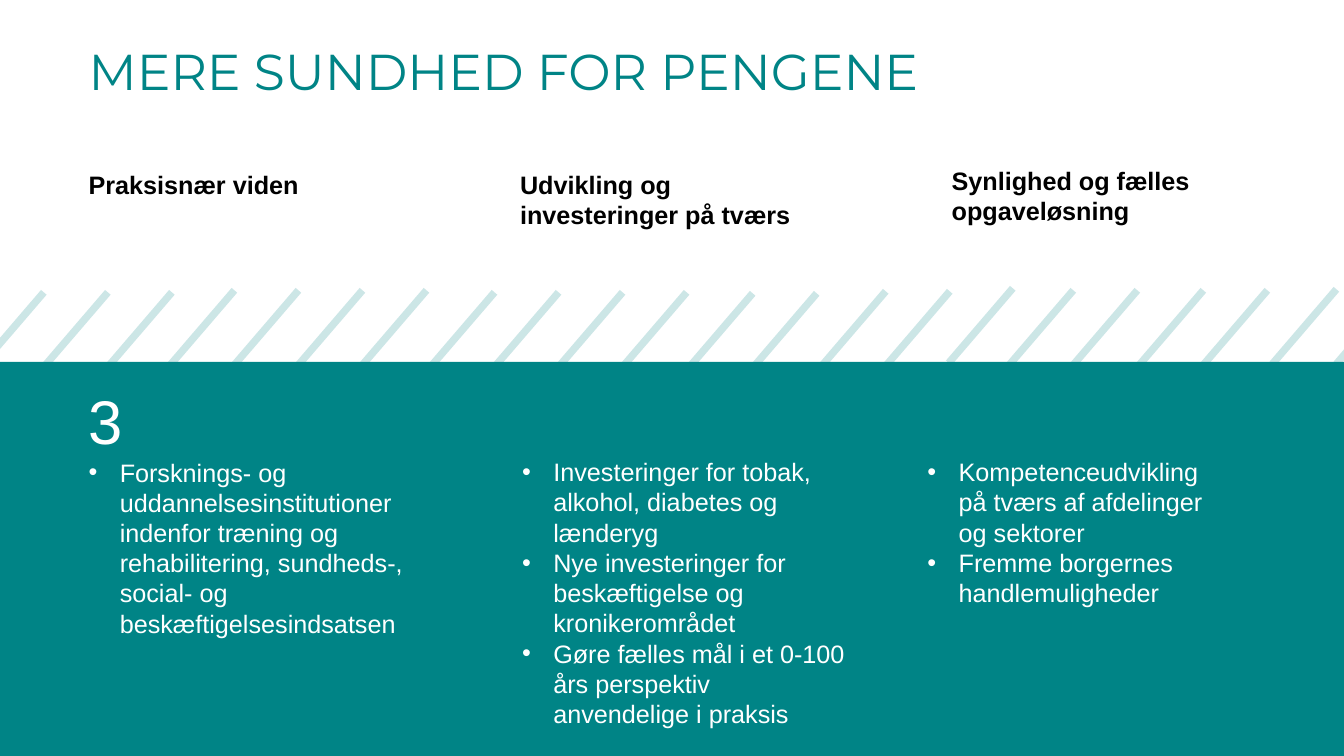
"""Build the slide about more health for the money."""
from pptx import Presentation
from pptx.dml.color import RGBColor as Rgb
from pptx.enum.shapes import MSO_CONNECTOR as Conn, MSO_SHAPE as Shape
from pptx.enum.text import MSO_ANCHOR as Anchor, MSO_AUTO_SIZE as Auto, PP_ALIGN as Align
from pptx.oxml.ns import qn
from pptx.util import Inches, Pt
from lxml.etree import SubElement as Sub

COLS = {"teal": "008486", "black": "000000", "white": "FFFFFF"}
HEAD = {"name": "Arial", "size": Pt(18), "bold": True}
BODY = {"name": "Arial", "size": Pt(18), "bold": False}
BIG = {"name": "Arial", "size": Pt(44), "bold": False}
TITLE = {"name": "Montserrat", "size": Pt(36), "bold": False}


def style(para, form, col):
    for key, val in form.items():
        setattr(para.font, key, val)
    para.font.color.rgb = Rgb.from_string(COLS[col])


def write(area, lines, col):
    frame = area.text_frame
    frame.word_wrap = True
    frame.auto_size = Auto.SHAPE_TO_FIT_TEXT
    frame.vertical_anchor = Anchor.TOP
    for num, (text, form) in enumerate(lines):
        para = frame.add_paragraph() if num else frame.paragraphs[0]
        para.text = text
        para.alignment = Align.LEFT
        if form is BODY:
            props = para._p.get_or_add_pPr()
            props.set("marL", str(Inches(0.31)))
            props.set("indent", str(-Inches(0.31)))
            Sub(props, qn("a:buFont")).set("typeface", "Arial")
            Sub(props, qn("a:buChar")).set("char", "•")
        style(para, form, col)


deck = Presentation()
deck.slide_width, deck.slide_height = Inches(13.33), Inches(7.5)
slide = deck.slides.add_slide(deck.slide_layouts[5])
shapes = slide.shapes

band = shapes.add_shape(Shape.RECTANGLE, 0, Inches(3.59), Inches(13.33), Inches(3.91))
band.shadow.inherit = False
band.fill.solid()
band.fill.fore_color.rgb = Rgb.from_string(COLS["teal"])
band.line.fill.background()

title = shapes.title
title.left, title.top = Inches(0.78), Inches(0.35)
title.width, title.height = Inches(11.7), Inches(0.71)
write(title, [("MERE SUNDHED FOR PENGENE", TITLE)], "teal")

STEP, RISE = 0.635, 0.74
GROUPS = [
    (-0.2, 3.64, 3), (1.69, 3.62, 4), (4.27, 3.64, 4), (6.83, 3.65, 2), (8.15, 3.63, 2),
    (9.41, 3.6, 1), (10.01, 3.62, 2), (11.3, 3.62, 2), (12.62, 3.61, 2),
]
for start, low, count in GROUPS:
    for num in range(count):
        left = start + num * STEP
        dash = shapes.add_connector(
            Conn.STRAIGHT, Inches(left), Inches(low), Inches(left + STEP), Inches(low - RISE))
        dash.line.width = Pt(5.25)
        dash.line.color.rgb = Rgb.from_string(COLS["teal"])
        tint = dash.line._ln.find(".//" + qn("a:srgbClr"))
        Sub(tint, qn("a:alpha")).set("val", "20000")
        Sub(dash._element.spPr, qn("a:effectLst"))

BOXES = [
    (0.78, 1.63, 3.41, 0.4, "black", [("Praksisnær viden", HEAD)]),
    (5.06, 1.63, 3.13, 0.71, "black", [("Udvikling og investeringer på tværs", HEAD)]),
    (9.34, 1.59, 3.52, 0.71, "black", [("Synlighed og fælles opgaveløsning", HEAD)]),
    (0.78, 3.75, 3.84, 2.66, "white", [
        ("3", BIG),
        ("Forsknings- og uddannelsesinstitutioner indenfor træning og rehabilitering, "
         "sundheds-, social- og beskæftigelsesindsatsen", BODY),
    ]),
    (5.08, 4.48, 3.47, 3.13, "white", [
        ("Investeringer for tobak, alkohol, diabetes og lænderyg", BODY),
        ("Nye investeringer for beskæftigelse og kronikerområdet", BODY),
        ("Gøre fælles mål i et 0-100 års perspektiv anvendelige i praksis", BODY),
    ]),
    (9.1, 4.48, 3.21, 1.92, "white", [
        ("Kompetenceudvikling på tværs af afdelinger og sektorer", BODY),
        ("Fremme borgernes handlemuligheder", BODY),
    ]),
]
for left, top, width, height, col, lines in BOXES:
    box = shapes.add_textbox(Inches(left), Inches(top), Inches(width), Inches(height))
    write(box, lines, col)

deck.save("out.pptx")
